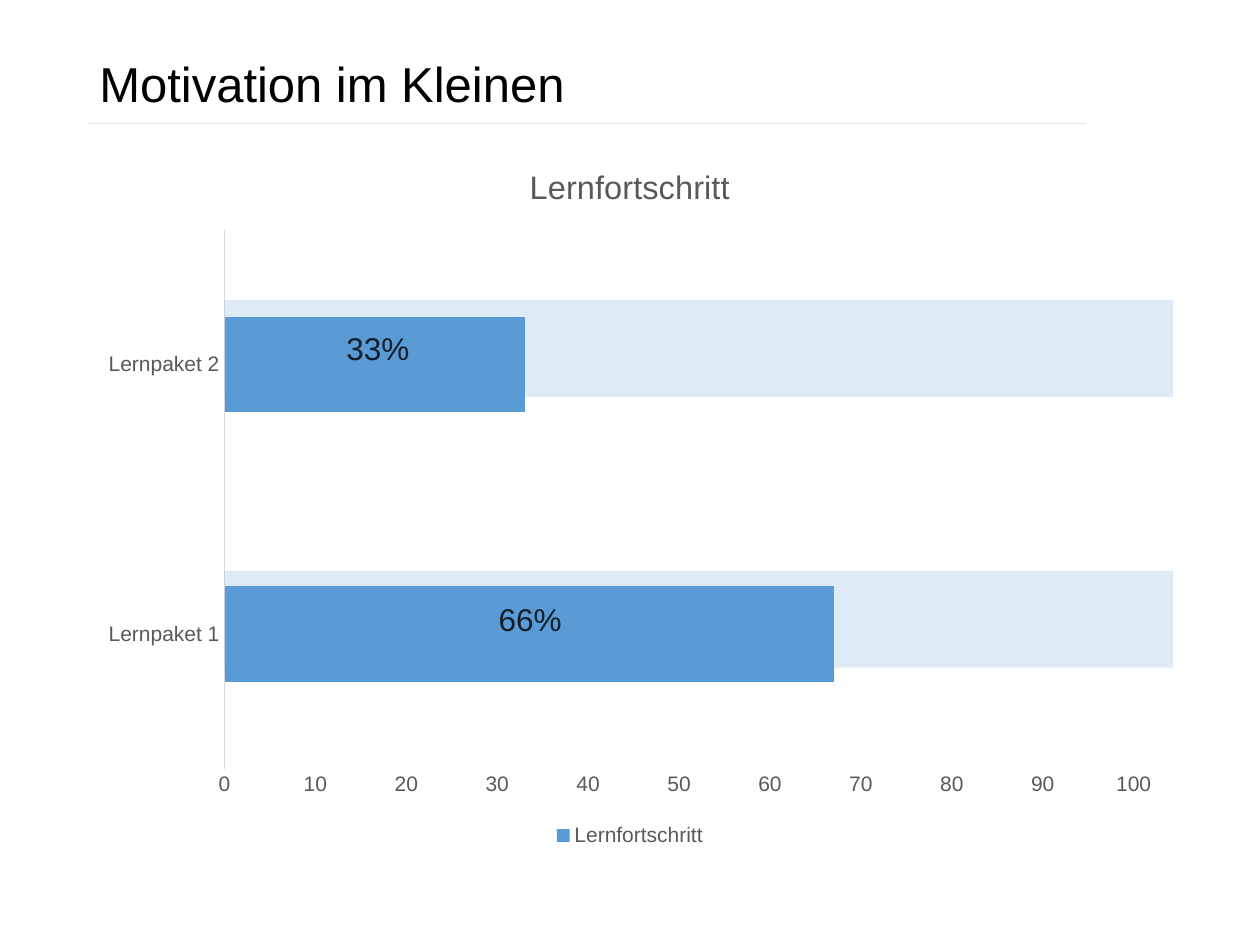
from lxml import etree
from pptx import Presentation
from pptx.chart.data import CategoryChartData
from pptx.dml.color import RGBColor
from pptx.enum.chart import XL_CHART_TYPE, XL_LEGEND_POSITION, XL_TICK_MARK
from pptx.enum.shapes import MSO_CONNECTOR, MSO_SHAPE
from pptx.enum.text import MSO_ANCHOR, MSO_AUTO_SIZE
from pptx.oxml.ns import qn
from pptx.util import Pt

BAR = XL_CHART_TYPE.BAR_CLUSTERED
BOTTOM = XL_LEGEND_POSITION.BOTTOM
NO_TICK = XL_TICK_MARK.NONE
STRAIGHT = MSO_CONNECTOR.STRAIGHT
RECTANGLE = MSO_SHAPE.RECTANGLE
MIDDLE = MSO_ANCHOR.MIDDLE
GROW = MSO_AUTO_SIZE.SHAPE_TO_FIT_TEXT

FONT = "Arial"
COLORS = {"text": "000000", "muted": "595959", "axis": "D9D9D9",
          "rule": "E7E6E6", "bar": "5B9BD5"}

TITLE = "Motivation im Kleinen"
SERIES = "Lernfortschritt"
PROGRESS = [("Lernpaket 1", 67), ("Lernpaket 2", 33)]
# label, label left, label top, track top
TRACKS = [("33%", 190.8, 184.3, 171.4), ("66%", 277.9, 339.1, 326.2)]

LEFT, WIDTH = 49.7, 620.6
RULE_Y = 70.6
LABEL_WIDTH, LABEL_HEIGHT = 67, 29
TRACK_LEFT, TRACK_HEIGHT = 128.2, 55.4
TRACK_OPACITY = 20


def color(name):
    return RGBColor.from_string(COLORS[name])


def style_font(font, size, name="text"):
    font.name = FONT
    font.size = Pt(size)
    font.bold = False
    font.color.rgb = color(name)


def add_text(slide, text, place, size):
    box = slide.shapes.add_textbox(*map(Pt, place))
    box.text_frame.word_wrap = True
    para = box.text_frame.paragraphs[0]
    para.text = text
    style_font(para.font, size)
    return box


def add_rule(slide):
    rule = slide.shapes.add_connector(
        STRAIGHT, Pt(LEFT), Pt(RULE_Y), Pt(LEFT + WIDTH - 49.6), Pt(RULE_Y))
    rule.line.color.rgb = color("rule")
    rule.line.width = Pt(1)
    etree.SubElement(rule.element.spPr, qn("a:effectLst"))


def add_progress_chart(slide):
    data = CategoryChartData()
    data.categories = [name for name, _ in PROGRESS]
    data.add_series(SERIES, [value for _, value in PROGRESS])
    chart = slide.shapes.add_chart(
        BAR, Pt(LEFT), Pt(79.2), Pt(WIDTH), Pt(407.5), data).chart
    style_font(chart.font, 10)

    chart.has_title = True
    para = chart.chart_title.text_frame.paragraphs[0]
    para.text = SERIES
    style_font(para.font, 18.6, "muted")
    chart.chart_title.include_in_layout = False

    chart.has_legend = True
    chart.legend.position = BOTTOM
    chart.legend.include_in_layout = False
    style_font(chart.legend.font, 12, "muted")

    for axis in (chart.category_axis, chart.value_axis):
        axis.major_tick_mark = axis.minor_tick_mark = NO_TICK
        axis.has_major_gridlines = False
        style_font(axis.tick_labels.font, 12, "muted")
    chart.category_axis.format.line.color.rgb = color("axis")
    chart.category_axis.format.line.width = Pt(0.75)
    chart.value_axis.format.line.fill.background()
    chart.value_axis.minimum_scale = 0
    chart.value_axis.maximum_scale = 100
    chart.value_axis.major_unit = 10

    plot = chart.plots[0]
    plot.gap_width = 182
    plot.vary_by_categories = False
    fill = plot.series[0].format.fill
    fill.solid()
    fill.fore_color.rgb = color("bar")


def add_track(slide, top):
    """Translucent band showing the full length of a progress bar."""
    track = slide.shapes.add_shape(
        RECTANGLE, Pt(TRACK_LEFT), Pt(top),
        Pt(LEFT + WIDTH - TRACK_LEFT), Pt(TRACK_HEIGHT))
    track.shadow.inherit = False
    track.line.fill.background()
    track.fill.solid()
    track.fill.fore_color.rgb = color("bar")
    tint = track.element.spPr.find(qn("a:solidFill"))[0]
    etree.SubElement(tint, qn("a:alpha"), val=str(TRACK_OPACITY * 1000))


def main():
    deck = Presentation()
    deck.slide_width, deck.slide_height = Pt(720), Pt(540)
    slide = deck.slides.add_slide(deck.slide_layouts[6])

    add_rule(slide)
    title = add_text(slide, TITLE, (LEFT, 28.8, WIDTH, 41.8), 28)
    title.text_frame.vertical_anchor = MIDDLE
    title.text_frame.paragraphs[0].line_spacing = 0.9
    add_progress_chart(slide)
    for label, left, top, _ in TRACKS:
        box = add_text(slide, label, (left, top, LABEL_WIDTH, LABEL_HEIGHT), 18)
        box.text_frame.auto_size = GROW
    for *_, top in TRACKS:
        add_track(slide, top)

    deck.save("out.pptx")


if __name__ == "__main__":
    main()
